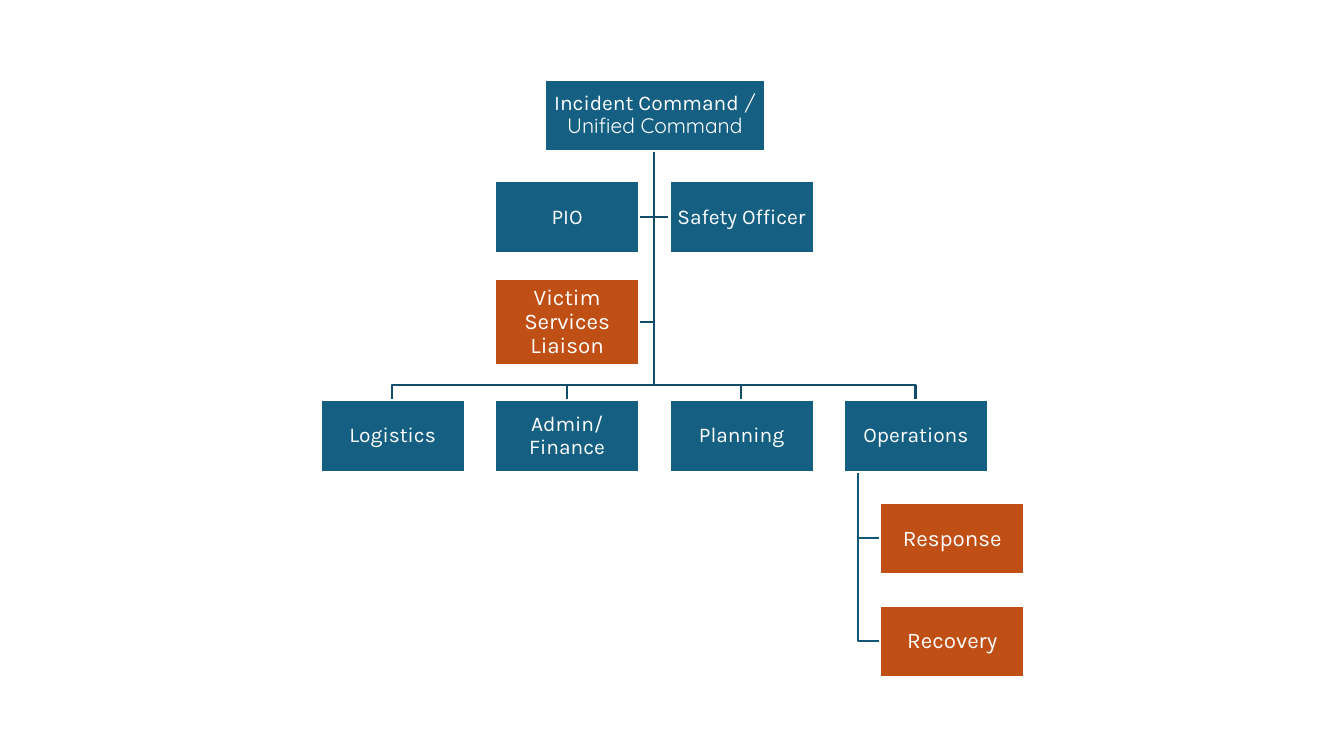
from pptx import Presentation
from pptx.dml.color import RGBColor
from pptx.enum.shapes import MSO_SHAPE
from pptx.enum.text import MSO_ANCHOR, PP_ALIGN
from pptx.util import Pt

PX = 9144
RECTANGLE = MSO_SHAPE.RECTANGLE
MIDDLE = MSO_ANCHOR.MIDDLE
CENTER = PP_ALIGN.CENTER

BLUE = RGBColor(0x15, 0x60, 0x82)
ORANGE = RGBColor(0xC0, 0x4F, 0x15)
TRUNK_LINE = RGBColor(0x11, 0x4D, 0x68)
BRANCH_LINE = RGBColor(0x13, 0x57, 0x76)
WHITE = RGBColor(0xFF, 0xFF, 0xFF)

BOX_WIDTH, BOX_HEIGHT = 143, 71
COLUMN_STEP = 173
ROW_STEP = 102
COMMAND_WIDTH = 219
SECTIONS = ["Logistics", "Admin/Finance", "Planning", "Operations"]
BRANCHES = ["Response", "Recovery"]


def add_elbow(slide, points, color):
    """Draw an open line through the points."""
    builder = slide.shapes.build_freeform(*points[0], scale=PX)
    builder.add_line_segments(points[1:], close=False)
    shape = builder.convert_to_shape()
    shape.shadow.inherit = False
    shape.fill.background()
    shape.line.color.rgb = color
    shape.line.width = Pt(1.5)


def add_box(slide, box, runs, fill=BLUE, size=15):
    """Draw a filled box with centred text given as (text, font) runs."""
    shape = slide.shapes.add_shape(RECTANGLE, *(length * PX for length in box))
    shape.shadow.inherit = False
    shape.fill.solid()
    shape.fill.fore_color.rgb = fill
    shape.line.color.rgb = WHITE
    shape.line.width = Pt(1.5)
    frame = shape.text_frame
    frame.word_wrap = True
    frame.vertical_anchor = MIDDLE
    frame.margin_left = frame.margin_right = PX
    frame.margin_top = frame.margin_bottom = PX
    paragraph = frame.paragraphs[0]
    paragraph.alignment = CENTER
    paragraph.line_spacing = 0.9
    for text, font in runs:
        run = paragraph.add_run()
        run.text = text
        run.font.name = font
        run.font.size = Pt(size)
        run.font.color.rgb = WHITE


def add_staff(slide, left, top, trunk):
    """Draw the command staff on both sides of the trunk."""
    right = left + COLUMN_STEP
    staff = [
        ("Victim Services Liaison", left, top + 97, 85, ORANGE, 16),
        ("Safety Officer", right, top, BOX_HEIGHT, BLUE, 15),
        ("PIO", left, top, BOX_HEIGHT, BLUE, 15),
    ]
    for name, box_left, box_top, height, fill, size in staff:
        middle = box_top + height // 2
        edge = box_left if box_left > trunk[0] else box_left + BOX_WIDTH
        add_elbow(slide, [trunk, (trunk[0], middle), (edge, middle)], TRUNK_LINE)
        add_box(slide, (box_left, box_top, BOX_WIDTH, height), [(name, "Karla")], fill, size)


def add_branches(slide, left, top):
    """Draw the branches hanging below the section box at left, top."""
    stem = left + 14
    branch_left = left + 36
    for row, name in enumerate(BRANCHES, start=1):
        branch_top = top + row * ROW_STEP
        middle = branch_top + BOX_HEIGHT // 2
        points = [(stem, top + BOX_HEIGHT), (stem, middle), (branch_left, middle)]
        add_elbow(slide, points, BRANCH_LINE)
        box = (branch_left, branch_top, BOX_WIDTH, BOX_HEIGHT)
        add_box(slide, box, [(name, "Karla")], ORANGE, 16)


def add_sections(slide, left, top, trunk):
    """Draw the row of sections and the lines that reach them."""
    bus = top - 15
    for column, name in enumerate(SECTIONS):
        box_left = left + column * COLUMN_STEP
        center = box_left + BOX_WIDTH // 2
        points = [trunk, (trunk[0], bus), (center, bus), (center, top)]
        add_elbow(slide, points, TRUNK_LINE)
        add_box(slide, (box_left, top, BOX_WIDTH, BOX_HEIGHT), [(name, "Karla")])


def add_organization_chart(slide, left, top):
    """Draw the whole command structure from its top left corner."""
    last_column = (len(SECTIONS) - 1) * COLUMN_STEP
    center = left + (last_column + BOX_WIDTH) // 2
    trunk = (center, top + BOX_HEIGHT)
    sections_top = top + 318
    add_staff(slide, left + COLUMN_STEP, top + 101, trunk)
    add_branches(slide, left + last_column, sections_top)
    add_sections(slide, left, sections_top, trunk)
    command_box = (center - COMMAND_WIDTH // 2, top, COMMAND_WIDTH, BOX_HEIGHT)
    title = [("Incident Command", "Karla"), (" / Unified Command", "Quicksand")]
    add_box(slide, command_box, title)


def main():
    """Build and save the presentation."""
    presentation = Presentation()
    presentation.slide_width = 1333 * PX
    presentation.slide_height = 750 * PX
    slide = presentation.slides.add_slide(presentation.slide_layouts[6])
    add_organization_chart(slide, 318, 79)
    presentation.save("out.pptx")


if __name__ == "__main__":
    main()
